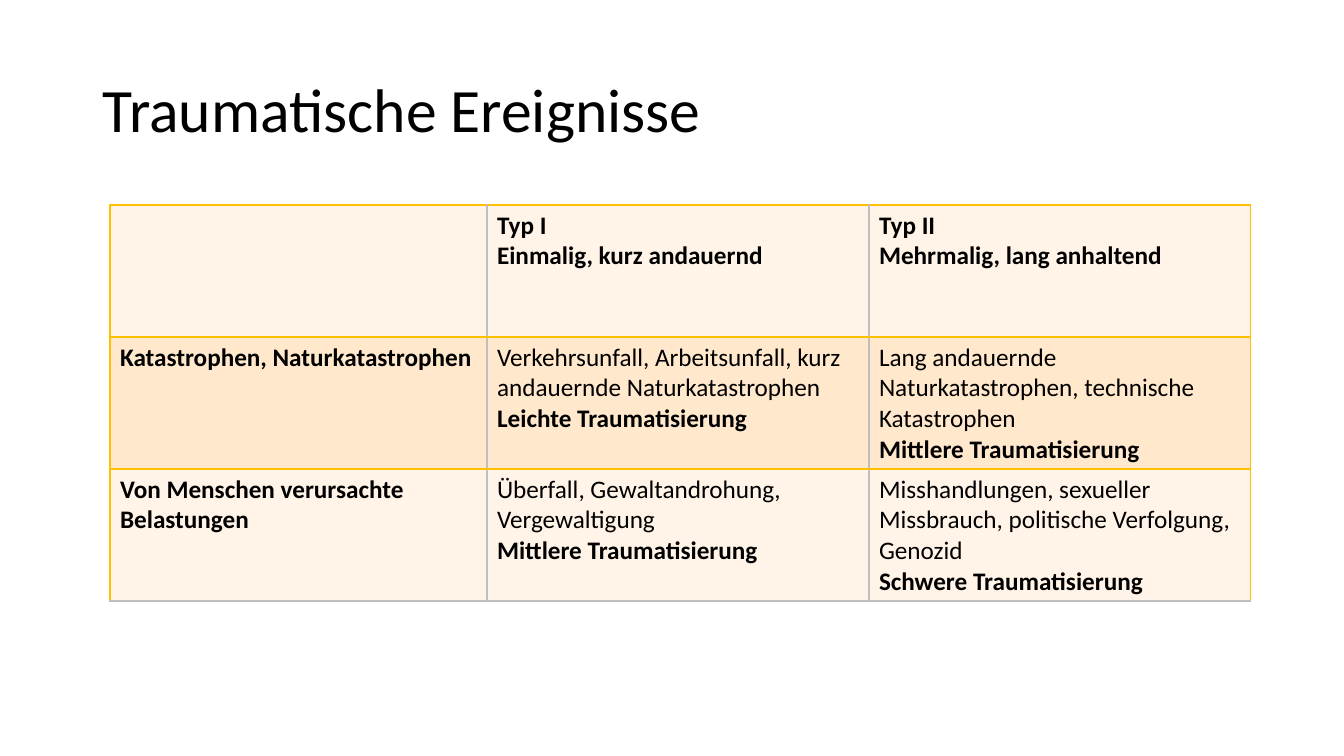
from lxml.etree import SubElement
from pptx import Presentation
from pptx.dml.color import RGBColor as Color
from pptx.enum.text import MSO_ANCHOR as Anchor
from pptx.oxml.ns import qn
from pptx.util import Pt

PX = 914400 / 100.8
COLORS = {"text": "000000", "light": "FFF4E7", "dark": "FFE8CC", "gold": "FFC000", "grey": "BFBFBF"}
TITLE_FONT = {"name": "Calibri", "size": Pt(44), "bold": False}
CELL_FONT = {"name": "Calibri", "size": Pt(18)}
COLUMN_WIDTHS = [377, 382, 382]
ROW_HEIGHT = 132
ROWS = [
    [
        [],
        ["Typ I", "Einmalig, kurz andauernd"],
        ["Typ II", "Mehrmalig, lang anhaltend"],
    ],
    [
        ["Katastrophen, Naturkatastrophen"],
        ["Verkehrsunfall, Arbeitsunfall, kurz andauernde Naturkatastrophen", "Leichte Traumatisierung"],
        ["Lang andauernde Naturkatastrophen, technische Katastrophen", "Mittlere Traumatisierung"],
    ],
    [
        ["Von Menschen verursachte Belastungen"],
        ["Überfall, Gewaltandrohung, Vergewaltigung", "Mittlere Traumatisierung"],
        ["Misshandlungen, sexueller Missbrauch, politische Verfolgung, Genozid", "Schwere Traumatisierung"],
    ],
]


def px(length):
    """Turn pixels into EMU."""
    return round(length * PX)


def add_span(para, text, formats):
    """Add a formatted run to a paragraph."""
    span = para.add_run()
    span.text = text
    for name, value in formats.items():
        setattr(span.font, name, value)
    span.font.color.rgb = Color.from_string(COLORS["text"])


def add_title(page, text):
    """Add the slide title."""
    box = page.shapes.add_textbox(px(93), px(40), px(1159), px(146))
    frame = box.text_frame
    for name, value in {"word_wrap": True, "vertical_anchor": Anchor.MIDDLE}.items():
        setattr(frame, name, value)
    para = frame.paragraphs[0]
    para.line_spacing = 0.9
    add_span(para, text, TITLE_FONT)


def add_border(cell, side, color, width):
    """Draw one side of a cell."""
    line = SubElement(cell._tc.get_or_add_tcPr(), qn(f"a:{side}"), w=str(Pt(width)))
    fill = SubElement(line, qn("a:solidFill"))
    SubElement(fill, qn("a:srgbClr"), val=COLORS[color])


def fill_cell(cell, texts, row, column):
    """Write, border and colour a cell."""
    frame = cell.text_frame
    for index, text in enumerate(texts):
        para = frame.add_paragraph() if index else frame.paragraphs[0]
        bold = row == 0 or column == 0 or index == len(texts) - 1
        add_span(para, text, {**CELL_FONT, "bold": bold})
    last_row, last_column = len(ROWS) - 1, len(COLUMN_WIDTHS) - 1
    gold = {"lnL": column == 0, "lnR": column == last_column, "lnT": True, "lnB": row < last_row}
    for side, is_gold in gold.items():
        add_border(cell, side, "gold" if is_gold else "grey", 1)
    cell.fill.solid()
    cell.fill.fore_color.rgb = Color.from_string(COLORS["dark" if row == 1 else "light"])


def add_event_table(page):
    """Add the table of traumatic events."""
    size = px(sum(COLUMN_WIDTHS)), px(ROW_HEIGHT * len(ROWS))
    table = page.shapes.add_table(len(ROWS), len(COLUMN_WIDTHS), px(110), px(205), *size).table
    for column, width in zip(table.columns, COLUMN_WIDTHS):
        column.width = px(width)
    for row, texts_in_row in enumerate(ROWS):
        table.rows[row].height = px(ROW_HEIGHT)
        for column, texts in enumerate(texts_in_row):
            fill_cell(table.cell(row, column), texts, row, column)


def main():
    """Build and save the deck."""
    deck = Presentation()
    deck.slide_width, deck.slide_height = px(1344), px(756)
    page = deck.slides.add_slide(deck.slide_layouts[6])
    add_title(page, "Traumatische Ereignisse")
    add_event_table(page)
    deck.save("out.pptx")


if __name__ == "__main__":
    main()
